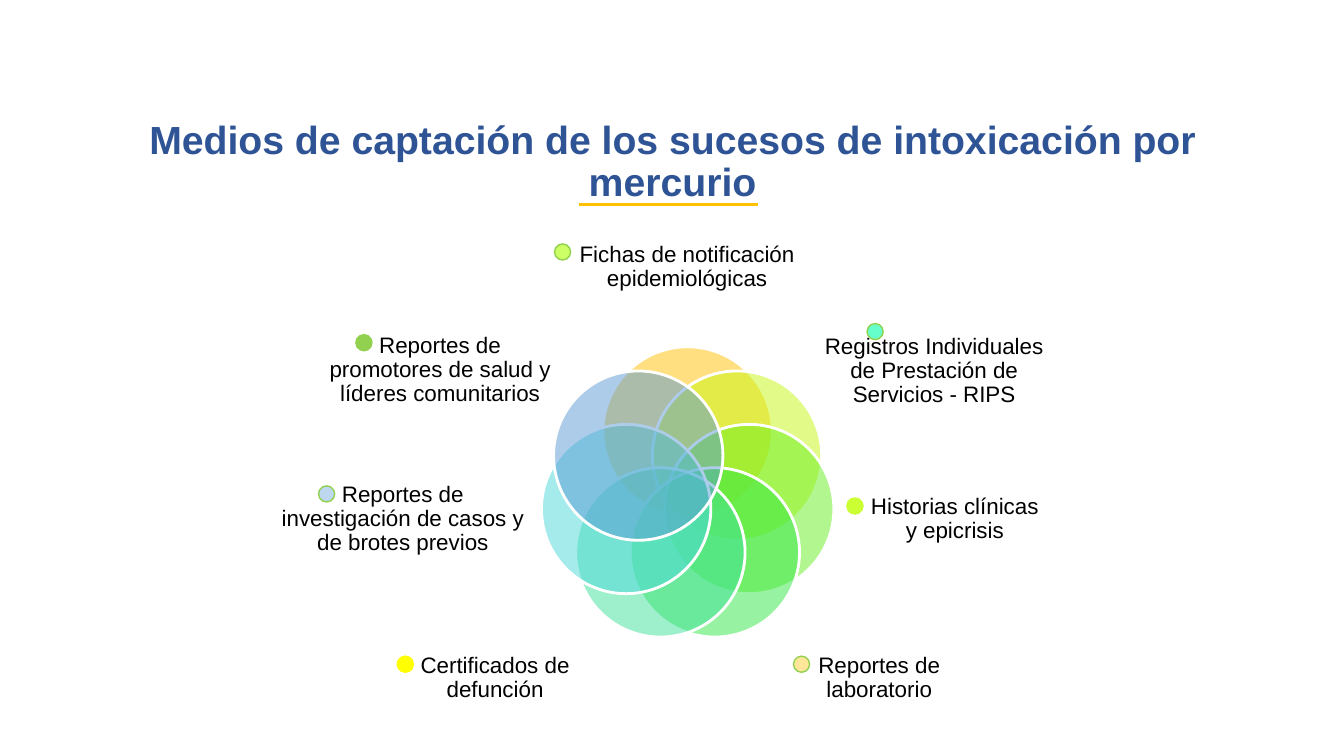
from dataclasses import dataclass
from math import cos, pi, sin

from lxml import etree
from pptx import Presentation
from pptx.dml.color import RGBColor
from pptx.enum.shapes import MSO_CONNECTOR, MSO_SHAPE
from pptx.enum.text import MSO_ANCHOR, MSO_AUTO_SIZE, PP_ALIGN
from pptx.oxml.ns import qn
from pptx.util import Pt

OVAL = MSO_SHAPE.OVAL
STRAIGHT = MSO_CONNECTOR.STRAIGHT
MIDDLE = MSO_ANCHOR.MIDDLE
CENTER = PP_ALIGN.CENTER
NO_AUTOFIT = MSO_AUTO_SIZE.NONE

EMU_PER_PX = 9144  # 100 px to the inch
PAGE_SIZE = (1333, 750)
TITLE_ONLY = 5


@dataclass(frozen=True)
class Theme:
    font: str = "Arial"
    title_size: int = 28
    label_size: int = 16
    title: str = "2F5496"
    text: str = "000000"
    accent: str = "FFC000"
    ring_line: str = "FFFFFF"
    petal_opacity: int = 50


THEME = Theme()
TITLE = "Medios de captación de los sucesos de intoxicación por mercurio"
TITLE_BOX = (92, 86, 1150, 151)
UNDERLINE = (574, 203, 752, 203)

# Ring of overlapping circles, clockwise from the top
RING_CENTER = (682, 491)
RING_RADIUS = 63
PETAL_SIZE = 168
DOT_SIZE = 16

# Label, label box, petal colour, dot corner, dot fill, dot line
SOURCES = [
    ("Fichas de notificación epidemiológicas",
     (570, 213, 223, 104), "FFC000", (550, 242), "CCFF66", "92D050"),
    ("Registros Individuales de Prestación de Servicios - RIPS",
     (815, 307, 223, 122), "C7F711", (860, 321), "66FFCC", "92D050"),
    ("Historias clínicas y epicrisis",
     (858, 455, 178, 121), "67EF21", (840, 494), "CCFF33", "CCFF33"),
    ("Reportes de laboratorio",
     (776, 617, 192, 111), "30E845", (787, 651), "FFE699", "92D050"),
    ("Certificados de defunción",
     (395, 617, 192, 111), "3FE19B", (394, 651), "FFFF00", "FFFF00"),
    ("Reportes de investigación de casos y de brotes previos",
     (274, 455, 251, 120), "4DD8DB", (316, 482), "BDD7EE", "92D050"),
    ("Reportes de promotores de salud y líderes comunitarios",
     (320, 310, 233, 115), "5B9BD5", (353, 332), "92D050", "92D050"),
]


def px(*lengths):
    return [round(length * EMU_PER_PX) for length in lengths]


def apply_format(target, values):
    for name, value in values.items():
        setattr(target, name, value)


def write_text(box, text, size, color, bold=False):
    """Fill a box with one centred paragraph."""
    frame = box.text_frame
    apply_format(frame, {"word_wrap": True, "auto_size": NO_AUTOFIT,
                         "vertical_anchor": MIDDLE})
    para = frame.paragraphs[0]
    apply_format(para, {"alignment": CENTER, "line_spacing": 0.9})
    span = para.add_run()
    span.text = text
    apply_format(span.font, {"name": THEME.font, "size": Pt(size), "bold": bold})
    span.font.color.rgb = RGBColor.from_string(color)


def set_line(shape, color, width):
    shape.line.color.rgb = RGBColor.from_string(color)
    shape.line.width = Pt(width)


def add_title(page):
    title = page.shapes.title
    apply_format(title, dict(zip(("left", "top", "width", "height"), px(*TITLE_BOX))))
    write_text(title, TITLE, THEME.title_size, THEME.title, bold=True)


def add_underline(page):
    line = page.shapes.add_connector(STRAIGHT, *px(*UNDERLINE))
    set_line(line, THEME.accent, 2.25)
    etree.SubElement(line._element.spPr, qn("a:effectLst"))


def add_circle(page, corner, size, fill, line, width, opacity=100):
    circle = page.shapes.add_shape(OVAL, *px(*corner, size, size))
    circle.shadow.inherit = False
    circle.fill.solid()
    circle.fill.fore_color.rgb = RGBColor.from_string(fill)
    set_line(circle, line, width)
    if opacity < 100:
        color = circle._element.spPr.find(qn("a:solidFill"))[0]
        etree.SubElement(color, qn("a:alpha"), val=str(opacity * 1000))


def add_label(page, text, place):
    box = page.shapes.add_textbox(*px(*place))
    sides = ("left", "right", "top", "bottom")
    apply_format(box.text_frame, {f"margin_{side}": 0 for side in sides})
    write_text(box, text, THEME.label_size, THEME.text)


def petal_corner(index):
    angle = 2 * pi * index / len(SOURCES)
    center_x, center_y = RING_CENTER
    return (round(center_x + RING_RADIUS * sin(angle) - PETAL_SIZE / 2),
            round(center_y - RING_RADIUS * cos(angle) - PETAL_SIZE / 2))


def main():
    deck = Presentation()
    deck.slide_width, deck.slide_height = px(*PAGE_SIZE)
    page = deck.slides.add_slide(deck.slide_layouts[TITLE_ONLY])

    # Heading
    add_title(page)
    add_underline(page)

    # Ring with its labels and their dots
    for index, (text, place, petal, corner, fill, line) in enumerate(SOURCES):
        add_circle(page, petal_corner(index), PETAL_SIZE, petal,
                   THEME.ring_line, 2, THEME.petal_opacity)
        add_label(page, text, place)
        add_circle(page, corner, DOT_SIZE, fill, line, 1)

    deck.save("out.pptx")


if __name__ == "__main__":
    main()
